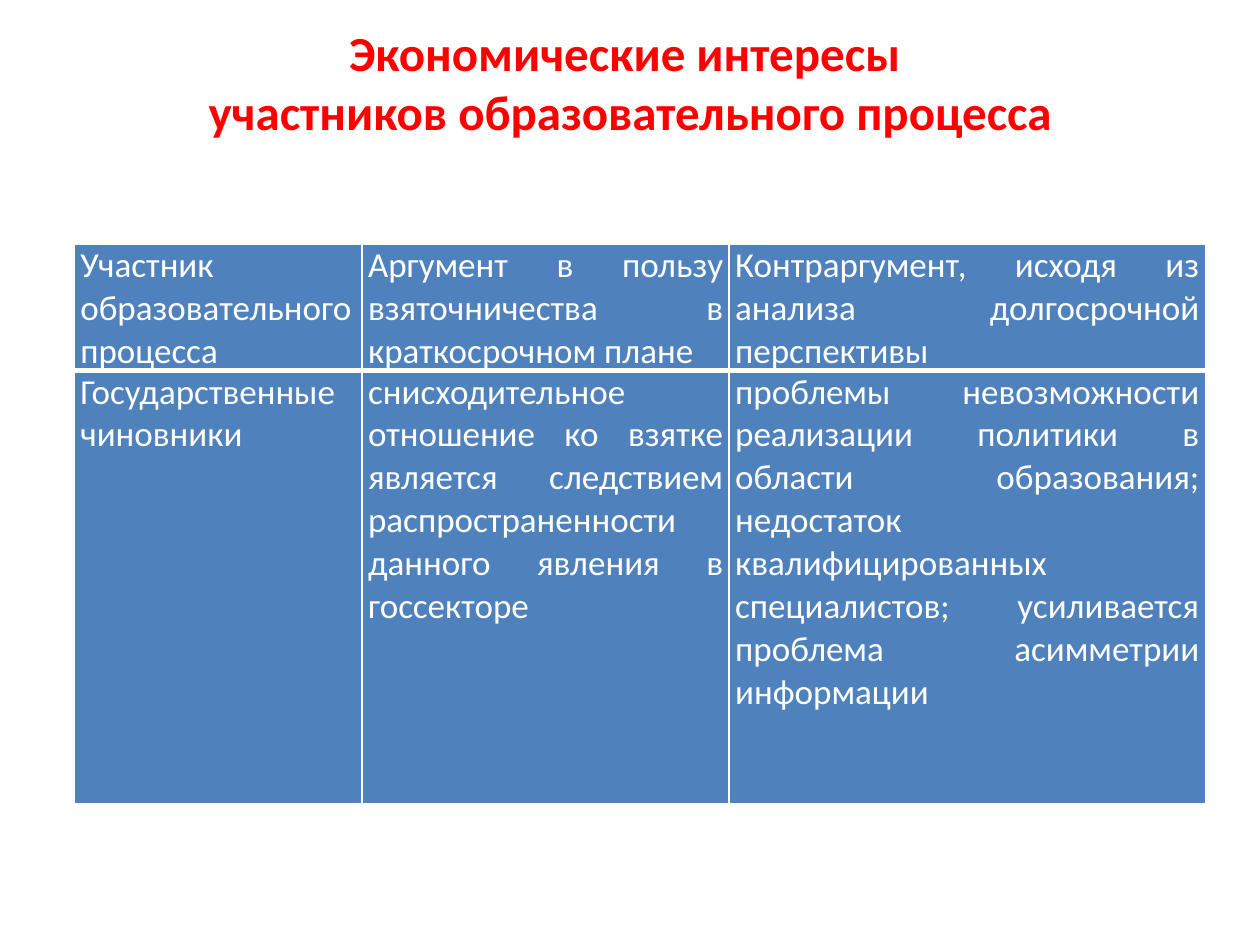
from pptx import Presentation
from pptx.dml.color import RGBColor
from pptx.enum.text import MSO_ANCHOR, MSO_AUTO_SIZE, PP_ALIGN
from pptx.oxml.ns import qn
from pptx.util import Cm, Pt
from lxml import etree

MID = PP_ALIGN.CENTER
JUST = PP_ALIGN.JUSTIFY
TOP = MSO_ANCHOR.TOP
GROW = MSO_AUTO_SIZE.SHAPE_TO_FIT_TEXT
HUES = {"title": "FF0000", "cell": "4F81BD", "text": "FFFFFF", "edge": "FFFFFF"}
FACE = "Calibri"

TITLE = ["Экономические интересы ", "участников образовательного процесса"]
ROWS = [
    [
        "Участник образовательного процесса",
        "Аргумент в пользу взяточничества в краткосрочном плане",
        "Контраргумент, исходя из анализа долгосрочной перспективы",
    ],
    [
        "Государственные чиновники",
        "снисходительное отношение ко взятке является следствием "
        "распространенности данного явления в госсекторе",
        "проблемы невозможности реализации политики в области образования; "
        "недостаток квалифицированных специалистов; усиливается проблема "
        "асимметрии информации",
    ],
]


class Page:
    def __init__(self, deck):
        self.slide = deck.slides.add_slide(deck.slide_layouts[6])

    def style(self, para, size, hue, align, bold=False):
        para.alignment = align
        font = para.font
        font.name, font.size, font.bold = FACE, Pt(size), bold
        font.color.rgb = RGBColor.from_string(HUES[hue])

    def title(self, lines, x, y, w, h):
        box = self.slide.shapes.add_textbox(Cm(x), Cm(y), Cm(w), Cm(h))
        frame = box.text_frame
        frame.word_wrap = True
        frame.auto_size = GROW
        frame.text = "\n".join(lines)
        for para in frame.paragraphs:
            self.style(para, 28, "title", MID, True)

    def edge(self, cell, sides):
        props = cell._tc.get_or_add_tcPr()
        for spot, (side, width) in enumerate(sides.items()):
            line = etree.Element(qn(f"a:ln{side}"), w=str(Pt(width)))
            fill = etree.SubElement(line, qn("a:solidFill"))
            etree.SubElement(fill, qn("a:srgbClr"), val=HUES["edge"])
            props.insert(spot, line)

    def table(self, rows, x, y, wides, highs):
        grid = self.slide.shapes.add_table(
            len(rows), len(wides), Cm(x), Cm(y), Cm(sum(wides)), Cm(sum(highs))
        ).table
        for col, wide in zip(grid.columns, wides):
            col.width = Cm(wide)
        for r, (texts, high) in enumerate(zip(rows, highs)):
            grid.rows[r].height = Cm(high)
            sides = {"L": 1, "R": 1, "T": 3 if r else 1, "B": 1 if r else 3}
            for c, text in enumerate(texts):
                cell = grid.cell(r, c)
                cell.text = text
                cell.vertical_anchor = TOP
                cell.margin_left = cell.margin_right = Cm(0.12)
                cell.margin_top = cell.margin_bottom = 0
                cell.fill.solid()
                cell.fill.fore_color.rgb = RGBColor.from_string(HUES["cell"])
                self.edge(cell, sides)
                self.style(cell.text_frame.paragraphs[0], 20, "text", JUST)


def main():
    deck = Presentation()
    deck.slide_width, deck.slide_height = Cm(25.4), Cm(19.05)
    page = Page(deck)
    page.title(TITLE, 0, 0.33, 25.4, 2.65)
    page.table(ROWS, 1.5, 4.93, [5.8, 7.4, 9.6], [2.42, 8.74])
    deck.save("out.pptx")


if __name__ == "__main__":
    main()
